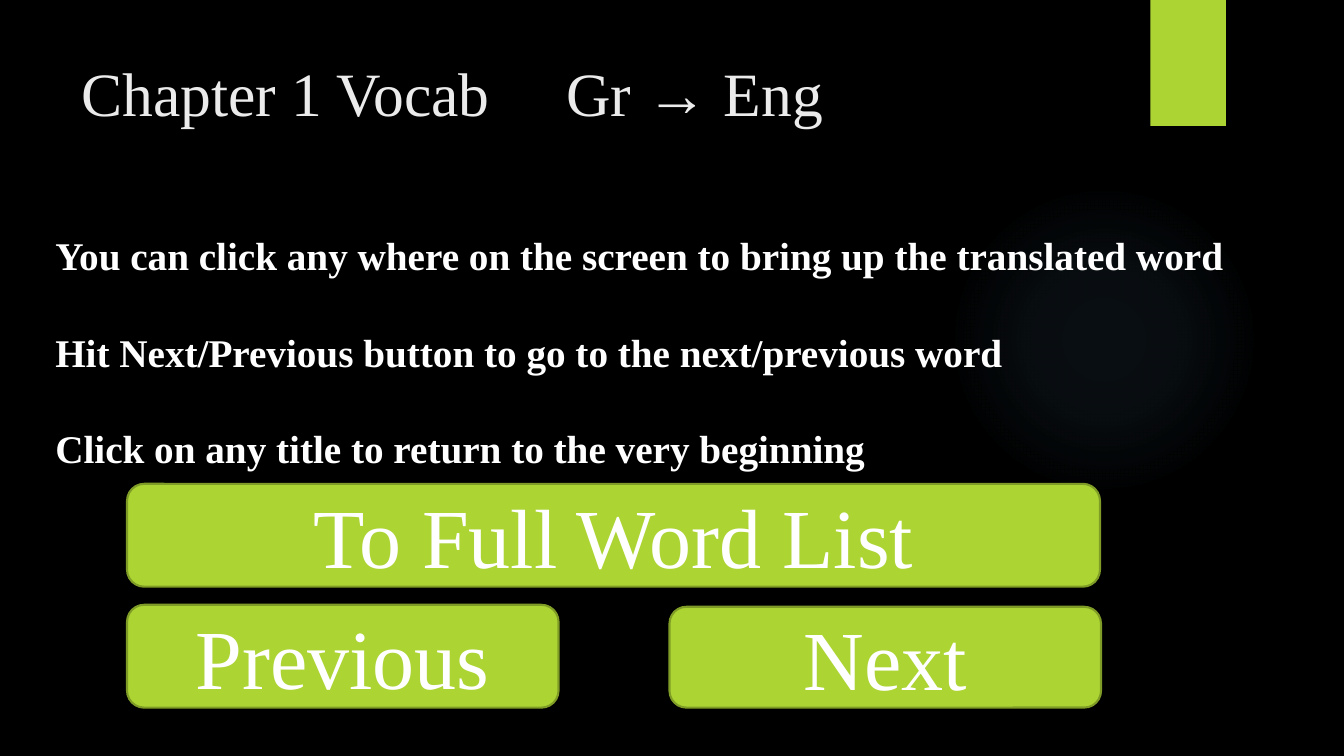
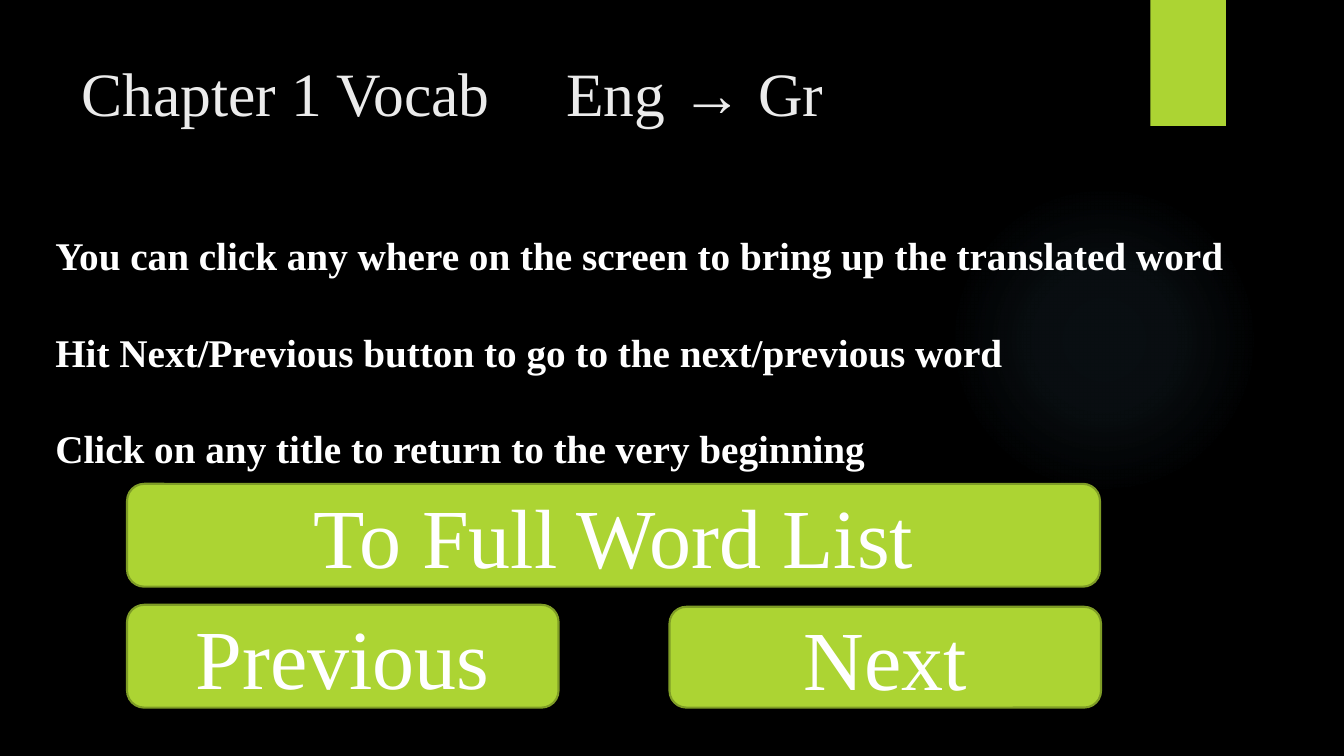
from lxml import etree
from pptx import Presentation
from pptx.dml.color import RGBColor
from pptx.enum.shapes import MSO_SHAPE
from pptx.enum.text import MSO_ANCHOR, PP_ALIGN
from pptx.oxml import parse_xml
from pptx.oxml.ns import nsdecls, qn
from pptx.util import Inches, Pt

FONT = "Times New Roman"
BLACK = RGBColor(0x00, 0x00, 0x00)
WHITE = RGBColor(0xFF, 0xFF, 0xFF)
TITLE_GREY = RGBColor(0xEB, 0xEB, 0xEB)
LIME = RGBColor(0xAC, 0xD4, 0x33)
DARK_LIME = RGBColor(0x7F, 0x9D, 0x26)

GLOW_COLOR = "7AC4F0"
GLOW_STOPS = [(0, 7), (36, 6), (69, 0)]  # position and opacity, in percent

DIRECTIONS = ["Gr → Eng", "Eng → Gr"]
INSTRUCTIONS = [
    "You can click any where on the screen to bring up the translated word",
    "Hit Next/Previous button to go to the next/previous word",
    "Click on any title to return to the very beginning",
]
BUTTONS = [
    ("Previous", 1.26, 6, 4.28, 1.02),
    ("Next", 6.64, 6.02, 4.28, 1),
    ("To Full Word List", 1.26, 4.8, 9.65, 1.02),
]


def add_filled_shape(slide, preset, left, top, width, height):
    shape = slide.shapes.add_shape(
        preset, Inches(left), Inches(top), Inches(width), Inches(height))
    shape.shadow.inherit = False
    shape.fill.solid()
    shape.fill.fore_color.rgb = LIME
    shape.line.fill.background()
    return shape


def format_text(text_frame, size, color, bold=False):
    for paragraph in text_frame.paragraphs:
        for run in paragraph.runs:
            run.font.name = FONT
            run.font.size = Pt(size)
            run.font.color.rgb = color
            run.font.bold = bold


presentation = Presentation()
presentation.slide_width = Inches(13.33)
presentation.slide_height = Inches(7.5)
blank_layout = presentation.slide_layouts[6]

stops_xml = "".join(
    f'<a:gs pos="{position * 1000}"><a:srgbClr val="{GLOW_COLOR}">'
    f'<a:alpha val="{opacity * 1000}"/></a:srgbClr></a:gs>'
    for position, opacity in GLOW_STOPS)
glow_xml = (
    f'<a:gradFill {nsdecls("a")} rotWithShape="1"><a:gsLst>{stops_xml}</a:gsLst>'
    '<a:path path="circle"><a:fillToRect l="50000" t="50000" r="50000" b="50000"/>'
    '</a:path></a:gradFill>')

for direction in DIRECTIONS:
    slide = presentation.slides.add_slide(blank_layout)
    slide.background.fill.solid()
    slide.background.fill.fore_color.rgb = BLACK

    glow = add_filled_shape(slide, MSO_SHAPE.OVAL, 9.41, 1.83, 3.08, 3.08)
    properties = glow.element.spPr
    properties.replace(properties.find(qn("a:solidFill")), parse_xml(glow_xml))

    add_filled_shape(slide, MSO_SHAPE.RECTANGLE, 11.41, 0, 0.75, 1.25)

    title = slide.shapes.add_textbox(
        Inches(0.71), Inches(0.5), Inches(10.5), Inches(0.96))
    title.text_frame.word_wrap = True
    title.text_frame.text = f"Chapter 1 Vocab\t{direction}"
    paragraph_properties = title.text_frame.paragraphs[0]._p.get_or_add_pPr()
    tab_list = etree.SubElement(paragraph_properties, qn("a:tabLst"))
    etree.SubElement(tab_list, qn("a:tab"), pos=str(Inches(4.81)), algn="l")
    format_text(title.text_frame, 44, TITLE_GREY)

    instructions = slide.shapes.add_textbox(
        Inches(0.45), Inches(2.25), Inches(12.19), Inches(2.93))
    instructions.text_frame.word_wrap = True
    instructions.text_frame.text = "\n".join(INSTRUCTIONS)
    for paragraph in instructions.text_frame.paragraphs[1:]:
        paragraph.space_before = Pt(35)
    format_text(instructions.text_frame, 28, WHITE, bold=True)

    for label, left, top, width, height in BUTTONS:
        button = add_filled_shape(
            slide, MSO_SHAPE.ROUNDED_RECTANGLE, left, top, width, height)
        button.line.color.rgb = DARK_LIME
        button.line.width = Pt(1.5)
        button.text_frame.text = label
        button.text_frame.vertical_anchor = MSO_ANCHOR.MIDDLE
        button.text_frame.paragraphs[0].alignment = PP_ALIGN.CENTER
        format_text(button.text_frame, 60, WHITE)

presentation.save("out.pptx")
